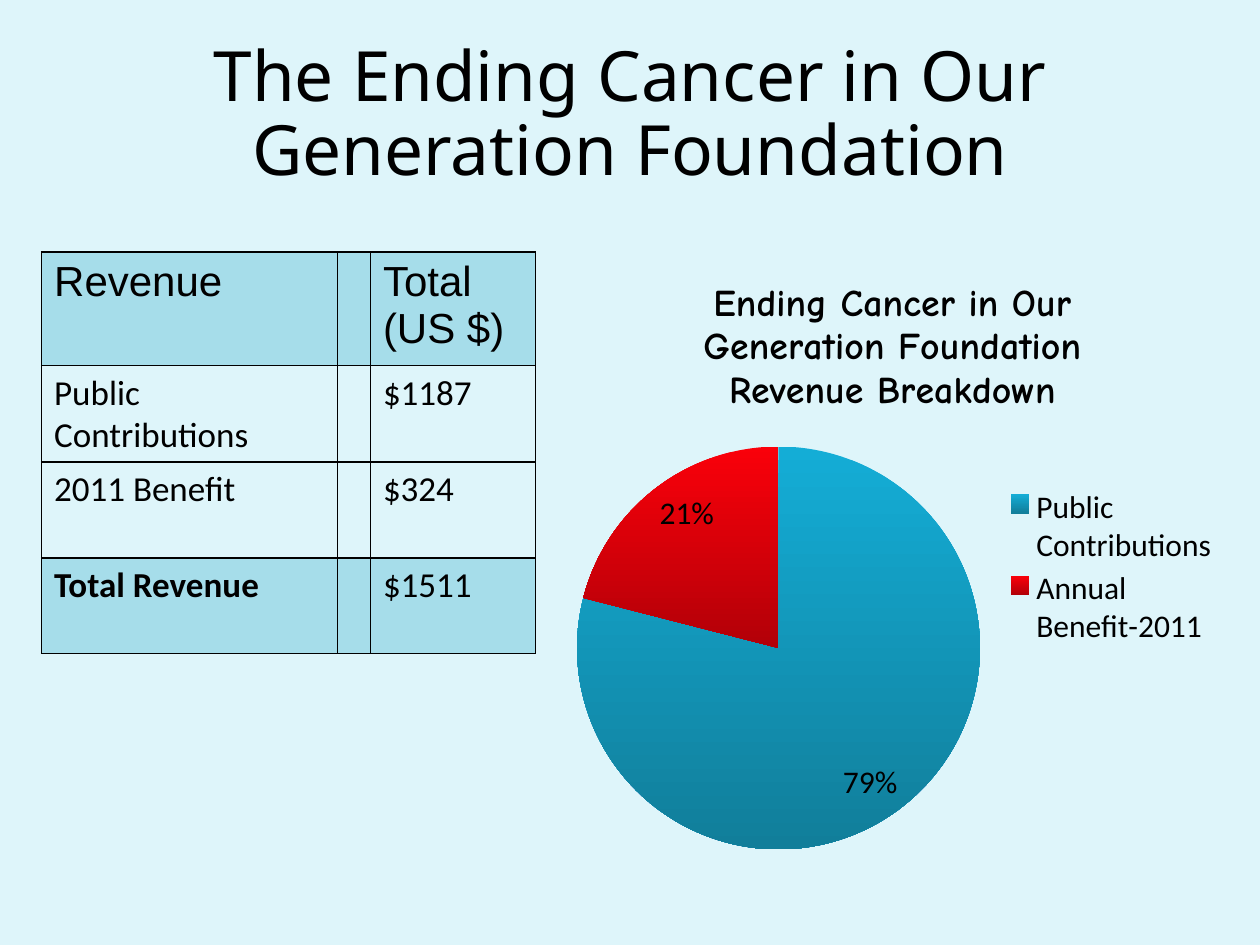
from lxml import etree
from pptx import Presentation
from pptx.chart.data import CategoryChartData
from pptx.dml.color import RGBColor
from pptx.enum.chart import XL_CHART_TYPE, XL_LABEL_POSITION, XL_LEGEND_POSITION
from pptx.enum.text import MSO_ANCHOR, PP_ALIGN
from pptx.oxml import parse_xml
from pptx.oxml.ns import nsdecls, qn
from pptx.util import Inches, Pt

PIE = XL_CHART_TYPE.PIE
INSIDE_END = XL_LABEL_POSITION.INSIDE_END
LEGEND_RIGHT = XL_LEGEND_POSITION.RIGHT
MIDDLE = MSO_ANCHOR.MIDDLE
CENTER = PP_ALIGN.CENTER

COLORS = {
    "background": "DEF5FA",
    "text": "000000",
    "band": "A6DDEA",
    "blue_top": "14ADD6",
    "blue_bottom": "117E9A",
    "red_top": "FA000A",
    "red_bottom": "B20008",
}
TITLE_FONT = {"name": "Noto Sans", "size": Pt(39.6)}
HEADER_FONT = {"name": "Arial", "size": Pt(24)}
BODY_FONT = {"name": "Calibri", "size": Pt(20)}
TOTAL_FONT = {**BODY_FONT, "bold": True}
CHART_FONT = {"name": "Calibri", "size": Pt(18)}
CHART_TITLE_FONT = {"name": "Comic Neue", "size": Pt(21.6), "bold": True}

COLUMN_WIDTHS = [2.35, 0.26, 1.31]
ROW_HEIGHT = 0.76
REVENUE_ROWS = [
    ("Revenue", "Total (US $)", HEADER_FONT, HEADER_FONT, True),
    ("Public Contributions", "$1187", BODY_FONT, BODY_FONT, False),
    ("2011 Benefit", "$324", BODY_FONT, BODY_FONT, False),
    ("Total Revenue", "$1511", TOTAL_FONT, BODY_FONT, True),
]
CHART_TITLE = "Ending Cancer in Our Generation Foundation Revenue Breakdown"
REVENUE_SHARES = {"Public Contributions": 79, "Annual Benefit-2011": 21}
SLICE_GRADIENTS = [("blue_top", "blue_bottom"), ("red_top", "red_bottom")]


def color(name):
    """Return the named colour."""
    return RGBColor.from_string(COLORS[name])


def format_font(font, values):
    """Apply font values and the text colour."""
    for attribute, value in values.items():
        setattr(font, attribute, value)
    font.color.rgb = color("text")


def write_text(text_frame, text, font):
    """Write one formatted run and return its paragraph."""
    paragraph = text_frame.paragraphs[0]
    run = paragraph.add_run()
    run.text = text
    format_font(run.font, font)
    return paragraph


def add_title(slide, text):
    """Add the centred slide title."""
    shape = slide.shapes.add_textbox(Inches(0.5), Inches(0.3), Inches(9), Inches(1.25))
    shape.text_frame.word_wrap = True
    shape.text_frame.vertical_anchor = MIDDLE
    paragraph = write_text(shape.text_frame, text, TITLE_FONT)
    paragraph.alignment = CENTER
    paragraph.line_spacing = 0.88


def add_borders(cell):
    """Draw a one-point line on every side of a cell."""
    properties = cell._tc.get_or_add_tcPr()
    for side in ("lnL", "lnR", "lnT", "lnB"):
        properties.append(parse_xml(
            f'<a:{side} {nsdecls("a")} w="{Pt(1)}"><a:solidFill>'
            f'<a:srgbClr val="{COLORS["text"]}"/></a:solidFill></a:{side}>'
        ))


def add_revenue_table(slide):
    """Add the revenue table with its narrow spacer column."""
    frame = slide.shapes.add_table(
        len(REVENUE_ROWS), len(COLUMN_WIDTHS), Inches(0.33), Inches(2),
        Inches(sum(COLUMN_WIDTHS)), Inches(ROW_HEIGHT * len(REVENUE_ROWS)),
    )
    table = frame.table
    for column, width in zip(table.columns, COLUMN_WIDTHS):
        column.width = Inches(width)
    for row, (label, amount, label_font, amount_font, banded) in zip(table.rows, REVENUE_ROWS):
        row.height = Inches(ROW_HEIGHT)
        for cell in row.cells:
            add_borders(cell)
            if banded:
                cell.fill.solid()
                cell.fill.fore_color.rgb = color("band")
            else:
                cell.fill.background()
        write_text(row.cells[0].text_frame, label, label_font)
        write_text(row.cells[2].text_frame, amount, amount_font)


def place(element, successor, inner=False, **fractions):
    """Give a chart part a fixed layout in fractions of the chart."""
    for old in element.findall(qn("c:layout")):
        element.remove(old)
    layout = etree.Element(qn("c:layout"))
    manual = etree.SubElement(layout, qn("c:manualLayout"))
    settings = {"layoutTarget": "inner"} if inner else {}
    settings.update(xMode="edge", yMode="edge", **fractions)
    for name, value in settings.items():
        etree.SubElement(manual, qn(f"c:{name}")).set("val", str(value))
    element.find(qn(successor)).addprevious(layout)


def fill_slice(point, top, bottom):
    """Fill a pie slice with a downward gradient."""
    fill = point.format.fill
    fill.gradient()
    fill.gradient_angle = 270
    for stop, name in zip(fill.gradient_stops, (top, bottom)):
        stop.color.rgb = color(name)
    point.format.line.fill.background()


def add_revenue_chart(slide):
    """Add the pie chart of revenue shares."""
    data = CategoryChartData()
    data.categories = list(REVENUE_SHARES)
    data.add_series(CHART_TITLE, list(REVENUE_SHARES.values()))
    chart = slide.shapes.add_chart(
        PIE, Inches(4.42), Inches(2), Inches(5.33), Inches(4.95), data
    ).chart
    format_font(chart.font, CHART_FONT)
    chart.has_title = True
    write_text(chart.chart_title.text_frame, CHART_TITLE, CHART_TITLE_FONT)
    chart.chart_title.include_in_layout = False
    chart.has_legend = True
    chart.legend.position = LEGEND_RIGHT
    chart.legend.include_in_layout = False
    format_font(chart.legend.font, CHART_FONT)

    plot = chart.plots[0]
    plot.vary_by_categories = True
    plot.has_data_labels = True
    labels = plot.data_labels
    label_format = {"show_percentage": True, "show_value": False, "position": INSIDE_END,
                    "number_format": "0%", "number_format_is_linked": False}
    for attribute, value in label_format.items():
        setattr(labels, attribute, value)
    format_font(labels.font, CHART_FONT)
    for index, gradient in enumerate(SLICE_GRADIENTS):
        fill_slice(plot.series[0].points[index], *gradient)

    plot_area = chart._chartSpace.chart.plotArea
    place(plot_area, "c:pieChart", inner=True, x=0.03, y=0.31, w=0.6, h=0.65)
    place(chart.legend._element, "c:overlay", x=0.66, y=0.37, w=0.33, h=0.27)


def main():
    """Build and save the slide."""
    presentation = Presentation()
    presentation.slide_width = Inches(10)
    presentation.slide_height = Inches(7.5)
    slide = presentation.slides.add_slide(presentation.slide_layouts[6])
    slide.background.fill.solid()
    slide.background.fill.fore_color.rgb = color("background")
    add_title(slide, "The Ending Cancer in Our Generation Foundation")
    add_revenue_chart(slide)
    add_revenue_table(slide)
    presentation.save("out.pptx")


if __name__ == "__main__":
    main()
